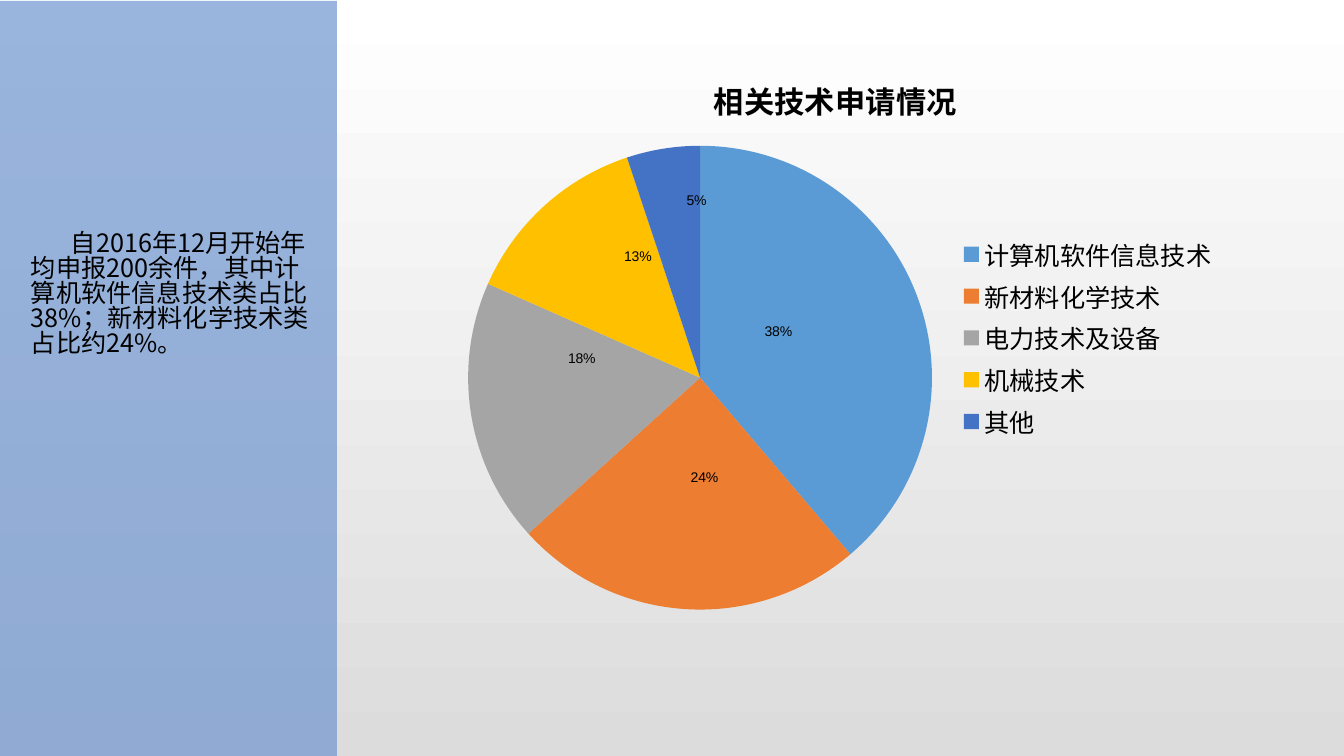
from dataclasses import dataclass

import lxml.etree
import pptx
import pptx.chart.data
import pptx.dml.color
import pptx.enum.chart
import pptx.enum.shapes
import pptx.enum.text
import pptx.oxml.ns
import pptx.util

SLIDE_W, SLIDE_H = 1344, 756
EMU_PER_PX = 12192000 / SLIDE_W


@dataclass(frozen=True)
class Theme:
    text: str = "000000"
    panel: str = "7398D0"
    panel_alpha: int = 72000
    bg_top: str = "FFFFFF"
    bg_bottom: str = "DCDCDC"
    font: str = "Arial"
    cjk_font: str = "Noto Sans CJK SC"
    body_size: float = 18
    title_size: float = 21.6
    label_size: float = 10


@dataclass(frozen=True)
class Box:
    left: int
    top: int
    width: int
    height: int

    def emu(self) -> list[int]:
        return [px(v) for v in (self.left, self.top, self.width, self.height)]


@dataclass(frozen=True)
class Slice:
    name: str
    share: float
    color: str
    label_dx: int
    label_dy: int


THEME = Theme()
PANEL = Box(0, 1, 337, 755)
SUMMARY = Box(21, 227, 308, 234)
CHART = Box(443, 52, 785, 572)
PIE = Box(468, 146, 464, 464)
TITLE = "相关技术申请情况"
SUMMARY_TEXT = ("自2016年12月开始年均申报200余件，其中计算机软件信息技术类占比38%；"
                "新材料化学技术类占比约24%。")
SLICES = [
    Slice("计算机软件信息技术", 0.38, "5B9BD5", -31, -6),
    Slice("新材料化学技术", 0.24, "ED7D31", 12, -16),
    Slice("电力技术及设备", 0.18, "A5A5A5", -4, -38),
    Slice("机械技术", 0.13, "FFC000", 16, -35),
    Slice("其他", 0.05, "4472C4", 15, -63),
]


def px(value: float) -> int:
    return round(value * EMU_PER_PX)


def rgb(color: str) -> pptx.dml.color.RGBColor:
    return pptx.dml.color.RGBColor.from_string(color)


def set_font(font, size: float, name: str = THEME.font, bold: bool = False) -> None:
    for key, value in {"size": pptx.util.Pt(size), "name": name, "bold": bold}.items():
        setattr(font, key, value)
    font.color.rgb = rgb(THEME.text)


def add_layout(parent, index: int, **values) -> None:
    """Insert a manual chart layout as the given child of parent."""
    qn = pptx.oxml.ns.qn
    layout = lxml.etree.Element(qn("c:layout"))
    manual = lxml.etree.SubElement(layout, qn("c:manualLayout"))
    for tag, value in values.items():
        lxml.etree.SubElement(manual, qn(f"c:{tag}")).set("val", str(value))
    parent.insert(index, layout)


def paint_background(s) -> None:
    fill = s.background.fill
    fill.gradient()
    fill.gradient_angle = 270
    for stop, color, position in zip(fill.gradient_stops,
                                     (THEME.bg_top, THEME.bg_bottom), (0, 1)):
        stop.color.rgb = rgb(color)
        stop.position = position


def add_panel(s) -> None:
    sp = s.shapes.add_shape(pptx.enum.shapes.MSO_SHAPE.RECTANGLE, *PANEL.emu())
    sp.shadow.inherit = False
    sp.line.fill.background()
    sp.fill.solid()
    sp.fill.fore_color.rgb = rgb(THEME.panel)
    color = sp.fill._xPr.find(".//" + pptx.oxml.ns.qn("a:srgbClr"))
    alpha = lxml.etree.SubElement(color, pptx.oxml.ns.qn("a:alpha"))
    alpha.set("val", str(THEME.panel_alpha))


def add_summary(s) -> None:
    tf = s.shapes.add_textbox(*SUMMARY.emu()).text_frame
    tf.word_wrap = True
    p = tf.paragraphs[0]
    p.line_spacing = 0.83
    p._p.get_or_add_pPr().set("indent", str(px(40)))
    r = p.add_run()
    r.text = SUMMARY_TEXT
    set_font(r.font, THEME.body_size, THEME.cjk_font)
    ea = lxml.etree.SubElement(r.font._rPr, pptx.oxml.ns.qn("a:ea"))
    ea.set("typeface", THEME.cjk_font)


def add_pie(s) -> None:
    data = pptx.chart.data.CategoryChartData(number_format="0%")
    data.categories = [item.name for item in SLICES]
    data.add_series(TITLE, [item.share for item in SLICES])
    chart = s.shapes.add_chart(pptx.enum.chart.XL_CHART_TYPE.PIE, *CHART.emu(), data).chart
    set_font(chart.font, THEME.body_size)

    chart.has_title = True
    r = chart.chart_title.text_frame.paragraphs[0].add_run()
    r.text = TITLE
    set_font(r.font, THEME.title_size, bold=True)

    chart.has_legend = True
    chart.legend.position = pptx.enum.chart.XL_LEGEND_POSITION.RIGHT
    chart.legend.include_in_layout = False
    set_font(chart.legend.font, THEME.body_size)

    plot = chart.plots[0]
    plot.vary_by_categories = True
    series = plot.series[0]
    for i, item in enumerate(SLICES):
        point = series.points[i]
        point.format.fill.solid()
        point.format.fill.fore_color.rgb = rgb(item.color)
        point.format.line.fill.background()
        label = point.data_label
        set_font(label.font, THEME.label_size)
        label.position = pptx.enum.chart.XL_LABEL_POSITION.CENTER
    for label, item in zip(series._element.iter(pptx.oxml.ns.qn("c:dLbl")), SLICES):
        add_layout(label, 1, x=round(item.label_dx / CHART.width, 3),
                   y=round(item.label_dy / CHART.height, 3))

    area = chart._chartSpace.chart.plotArea
    for old in area.findall(pptx.oxml.ns.qn("c:layout")):
        area.remove(old)
    add_layout(area, 0, layoutTarget="inner", xMode="edge", yMode="edge",
               x=round((PIE.left - CHART.left) / CHART.width, 3),
               y=round((PIE.top - CHART.top) / CHART.height, 3),
               w=round(PIE.width / CHART.width, 3),
               h=round(PIE.height / CHART.height, 3))


def main() -> None:
    prs = pptx.Presentation()
    prs.slide_width, prs.slide_height = px(SLIDE_W), px(SLIDE_H)
    s = prs.slides.add_slide(prs.slide_layouts[6])
    paint_background(s)
    add_panel(s)
    add_summary(s)
    add_pie(s)
    prs.save("out.pptx")


if __name__ == "__main__":
    main()
